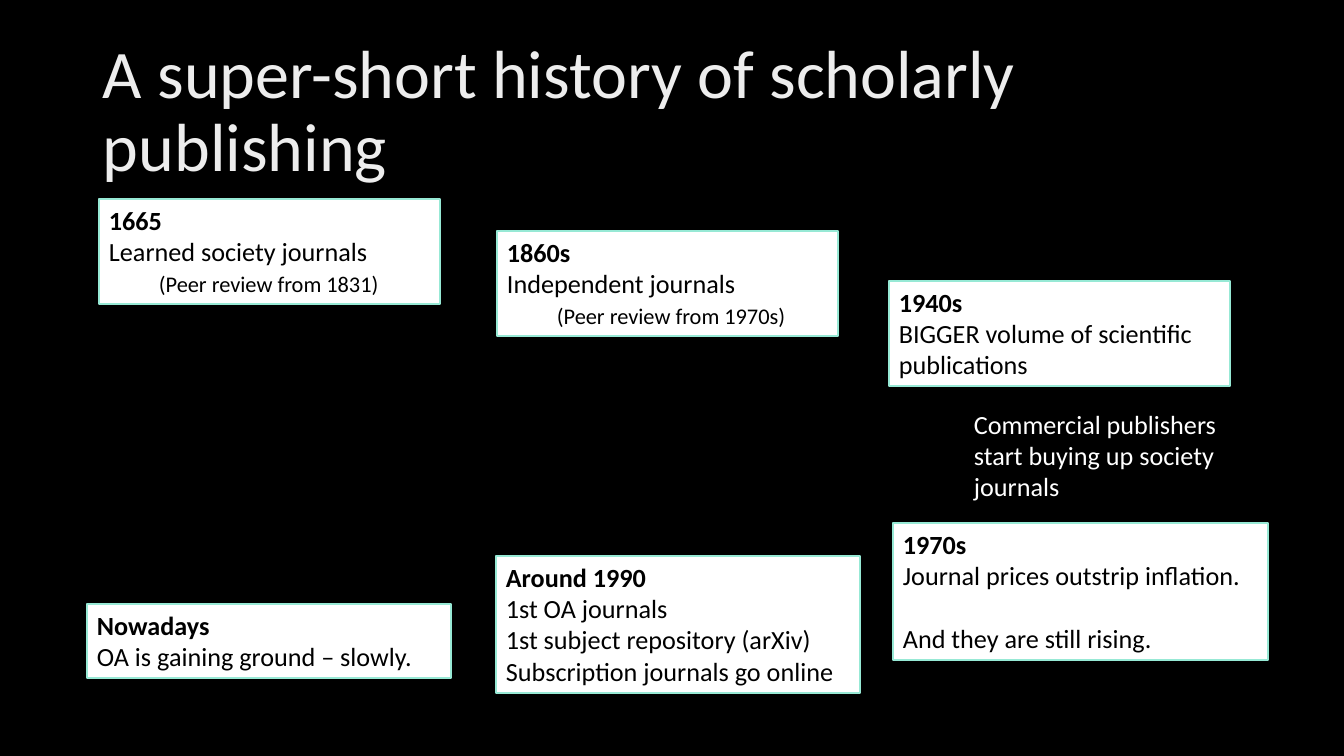
from pptx import Presentation
from pptx.dml.color import RGBColor
from pptx.enum.shapes import MSO_SHAPE
from pptx.enum.text import MSO_ANCHOR, PP_ALIGN
from pptx.util import Pt

EMU_PER_PX = 914400 / 100.8
FONT = "Calibri"
BODY_SIZE = 18.7
NOTE_SIZE = 16
BLACK, WHITE, MINT, PALE_GREY = "000000", "FFFFFF", "97E9D5", "EDEDED"


def px(length):
    return round(length * EMU_PER_PX)


def colour(hex_string):
    return RGBColor.from_string(hex_string)


def add_paragraph(frame, text, size=BODY_SIZE, color=BLACK, bold=False,
                  indent=0, before=0, line_spacing=None):
    """Fill the frame's empty first paragraph, or append another."""
    first = frame.paragraphs[0]
    para = frame.add_paragraph() if first.runs else first
    para.alignment = PP_ALIGN.LEFT
    if indent:
        para._p.get_or_add_pPr().set("marL", str(px(indent)))
    if before:
        para.space_before = Pt(before)
    if line_spacing:
        para.line_spacing = line_spacing
    span = para.add_run()
    span.text = text
    span.font.name = FONT
    span.font.size = Pt(size)
    span.font.bold = bold
    span.font.color.rgb = colour(color)


def add_label(page, left, top, width, height, text,
              anchor=MSO_ANCHOR.TOP, **text_format):
    box = page.shapes.add_textbox(px(left), px(top), px(width), px(height))
    frame = box.text_frame
    frame.word_wrap = True
    frame.vertical_anchor = anchor
    add_paragraph(frame, text, **text_format)


def add_event(page, left, top, width, height, date, lines):
    """Add a white card with a bold date; lines are (text, format) pairs."""
    box = page.shapes.add_shape(MSO_SHAPE.RECTANGLE,
                                px(left), px(top), px(width), px(height))
    box.shadow.inherit = False
    box.fill.solid()
    box.fill.fore_color.rgb = colour(WHITE)
    box.line.color.rgb = colour(MINT)
    box.line.width = Pt(1)
    frame = box.text_frame
    frame.word_wrap = True
    frame.vertical_anchor = MSO_ANCHOR.TOP
    add_paragraph(frame, date, bold=True)
    for text, text_format in lines:
        add_paragraph(frame, text, **text_format)


NOTE = {"size": NOTE_SIZE, "indent": 50, "before": 2.5}
AFTER_GAP = {"before": 22.8}

EVENTS = [
    (99, 199, 341, 105, "1665",
     [("Learned society journals", {}), ("(Peer review from 1831)", NOTE)]),
    (497, 231, 341, 105, "1860s",
     [("Independent journals", {}), ("(Peer review from 1970s)", NOTE)]),
    (889, 281, 341, 105, "1940s",
     [("BIGGER volume of scientific publications", {})]),
    (893, 523, 375, 137, "1970s",
     [("Journal prices outstrip inflation.", {}),
      ("And they are still rising.", AFTER_GAP)]),
    (496, 556, 364, 137, "Around 1990",
     [("1st OA journals", {}), ("1st subject repository (arXiv)", {}),
      ("Subscription journals go online", {})]),
    (87, 604, 364, 74, "Nowadays",
     [("OA is gaining ground – slowly.", {})]),
]


def main():
    deck = Presentation()
    deck.slide_width, deck.slide_height = px(1344), px(756)
    page = deck.slides.add_slide(deck.slide_layouts[6])
    page.background.fill.solid()
    page.background.fill.fore_color.rgb = colour(BLACK)

    # Title
    add_label(page, 93, 40, 1159, 146,
              "A super-short history of scholarly publishing",
              anchor=MSO_ANCHOR.MIDDLE, size=48.6, color=PALE_GREY,
              line_spacing=0.9)

    # Timeline cards
    for event in EVENTS:
        add_event(page, *event)

    # Remark between the 1940s and the 1970s
    add_label(page, 964, 403, 284, 105,
              "Commercial publishers start buying up society journals",
              color=WHITE)

    deck.save("out.pptx")


if __name__ == "__main__":
    main()
